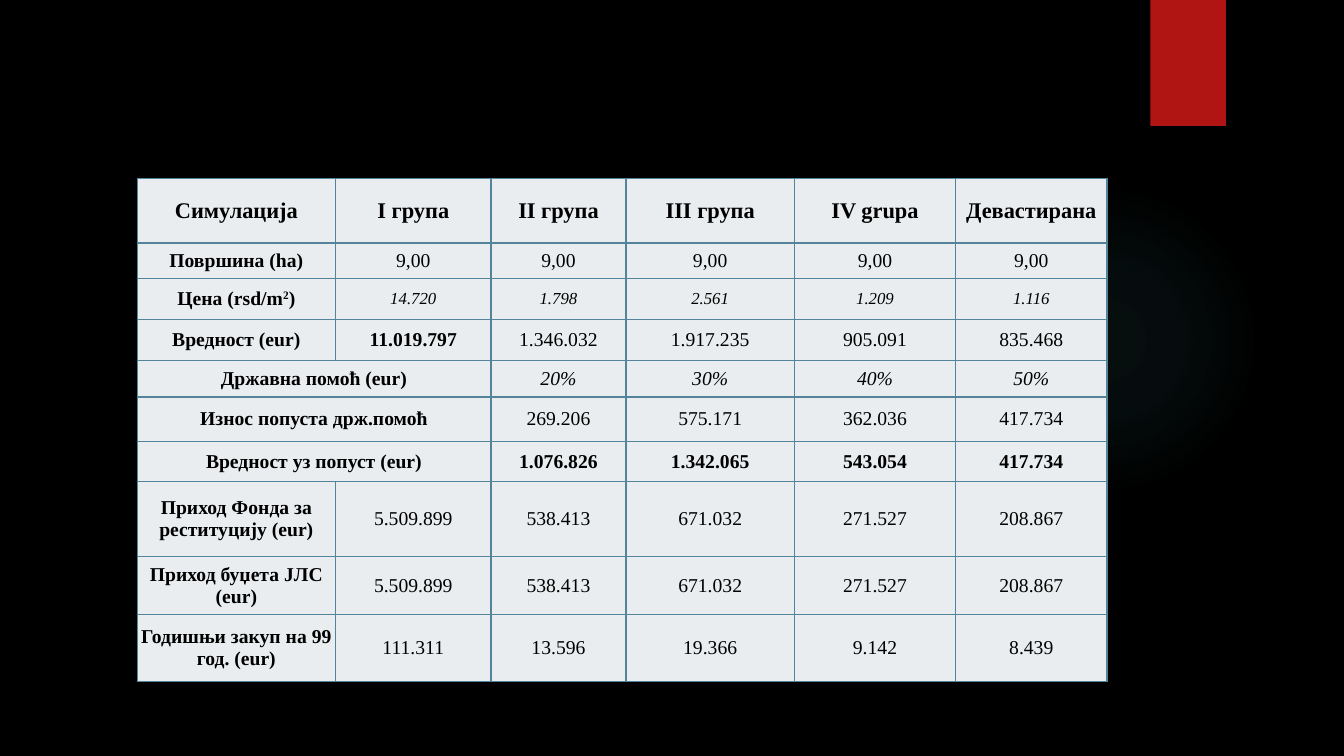
from dataclasses import dataclass

from lxml import etree
from pptx import Presentation
from pptx.dml.color import RGBColor
from pptx.enum import shapes, text
from pptx.oxml import ns
from pptx.util import Inches, Pt


@dataclass(frozen=True)
class Theme:
    background: str = "000000"
    ink: str = "000000"
    cell: str = "E9EDEF"
    border: str = "54849A"
    ribbon: str = "B01513"
    glow: str = "50B9C1"
    font: str = "Times New Roman"
    header_size: int = 16
    body_size: int = 14
    price_size: int = 12


THEME = Theme()

COLUMN_WIDTHS = [1.97, 1.54, 1.34, 1.67, 1.6, 1.5]
ROW_HEIGHTS = [0.64, 0.35, 0.41, 0.41, 0.36, 0.44, 0.4, 0.74, 0.58, 0.66]
HEADER_ROW, PRICE_ROW, VALUE_ROW, AID_ROW, DISCOUNTED_ROW = 0, 2, 3, 4, 6
INCOME = ["5.509.899", "538.413", "671.032", "271.527", "208.867"]
# None marks a cell that the label on its left spans.
ROWS = [
    ["Симулација", "I група", "II група", "III група", "IV grupa", "Девастирана"],
    ["Површина (ha)"] + ["9,00"] * 5,
    ["Цена (rsd/m^2^)", "14.720", "1.798", "2.561", "1.209", "1.116"],
    ["Вредност (eur)", "11.019.797", "1.346.032", "1.917.235", "905.091", "835.468"],
    ["Државна помоћ (eur)", None, "20%", "30%", "40%", "50%"],
    ["Износ попуста држ.помоћ", None, "269.206", "575.171", "362.036", "417.734"],
    ["Вредност уз попуст (eur)", None, "1.076.826", "1.342.065", "543.054", "417.734"],
    ["Приход Фонда за реституцију (eur)"] + INCOME,
    ["Приход буџета ЈЛС (eur)"] + INCOME,
    ["Годишњи закуп на 99 год. (eur)", "111.311", "13.596", "19.366", "9.142", "8.439"],
]


def add_element(parent, tag, **attributes):
    element = etree.SubElement(parent, ns.qn(tag))
    for name, value in attributes.items():
        element.set(name, str(value))
    return element


def add_color(parent, color, alpha=None):
    element = add_element(parent, "a:srgbClr", val=color)
    if alpha is not None:
        add_element(element, "a:alpha", val=alpha * 1000)


def add_plain_shape(slide, kind, left, top, width, height):
    shape = slide.shapes.add_shape(
        kind, Inches(left), Inches(top), Inches(width), Inches(height))
    shape.shadow.inherit = False
    shape.line.fill.background()
    return shape


def add_glow(slide):
    """Add the faint circle that fades out towards its edge."""
    glow = add_plain_shape(slide, shapes.MSO_SHAPE.OVAL, 9.41, 1.83, 3.08, 3.08)
    properties = glow._element.spPr
    gradient = etree.Element(ns.qn("a:gradFill"))
    stops = add_element(gradient, "a:gsLst")
    for position, alpha in [(0, 7), (36, 6), (69, 0)]:
        add_color(add_element(stops, "a:gs", pos=position * 1000), THEME.glow, alpha)
    circle = add_element(gradient, "a:path", path="circle")
    add_element(circle, "a:fillToRect", l=50000, t=50000, r=50000, b=50000)
    properties.find(ns.qn("a:prstGeom")).addnext(gradient)


def add_ribbon(slide):
    ribbon = add_plain_shape(slide, shapes.MSO_SHAPE.RECTANGLE, 11.41, 0, 0.75, 1.25)
    ribbon.fill.solid()
    ribbon.fill.fore_color.rgb = RGBColor.from_string(THEME.ribbon)
    effects = ribbon._element.spPr.find(ns.qn("a:effectLst"))
    shadow = add_element(effects, "a:outerShdw", blurRad=Pt(3), dist=Pt(2), dir=5400000)
    add_color(shadow, THEME.background, 45)


def style_cell(cell):
    """Set borders, fill, insets and anchor."""
    properties = cell._tc.get_or_add_tcPr()
    for side in ("a:lnL", "a:lnR", "a:lnT", "a:lnB"):
        line = add_element(properties, side, w=Pt(1))
        add_color(add_element(line, "a:solidFill"), THEME.border)
    cell.fill.solid()
    cell.fill.fore_color.rgb = RGBColor.from_string(THEME.cell)
    cell.margin_left = cell.margin_right = cell.margin_top = cell.margin_bottom = 0
    cell.vertical_anchor = text.MSO_ANCHOR.MIDDLE


def write_cell(cell, content, size, bold, italic):
    """Write centred text; a part between ^ marks is superscript."""
    paragraph = cell.text_frame.paragraphs[0]
    paragraph.alignment = text.PP_ALIGN.CENTER
    for index, part in enumerate(content.split("^")):
        run = paragraph.add_run()
        run.text = part
        if index % 2:
            run._r.get_or_add_rPr().set("baseline", "30000")
    font = paragraph.font
    font.name, font.size, font.bold, font.italic = THEME.font, Pt(size), bold, italic
    font.color.rgb = RGBColor.from_string(THEME.ink)


def text_style(row, column):
    """Return size, bold and italic for a cell."""
    if row == HEADER_ROW:
        return THEME.header_size, True, False
    if column == 0:
        return THEME.body_size, True, False
    size = THEME.price_size if row == PRICE_ROW else THEME.body_size
    bold = row == DISCOUNTED_ROW or (row, column) == (VALUE_ROW, 1)
    return size, bold, row in (PRICE_ROW, AID_ROW)


def add_simulation_table(slide):
    table = slide.shapes.add_table(
        len(ROWS), len(COLUMN_WIDTHS), Inches(1.36), Inches(1.77),
        Inches(sum(COLUMN_WIDTHS)), Inches(sum(ROW_HEIGHTS))).table
    table.first_row = table.horz_banding = False
    for column, width in zip(table.columns, COLUMN_WIDTHS):
        column.width = Inches(width)
    for row, height in zip(table.rows, ROW_HEIGHTS):
        row.height = Inches(height)
    for row, contents in enumerate(ROWS):
        for column, content in enumerate(contents):
            cell = table.cell(row, column)
            style_cell(cell)
            if content is None:
                table.cell(row, column - 1).merge(cell)
            else:
                write_cell(cell, content, *text_style(row, column))


def main():
    presentation = Presentation()
    presentation.slide_width, presentation.slide_height = Inches(13.33), Inches(7.5)
    slide = presentation.slides.add_slide(presentation.slide_layouts[6])
    slide.background.fill.solid()
    slide.background.fill.fore_color.rgb = RGBColor.from_string(THEME.background)
    add_glow(slide)
    add_ribbon(slide)
    add_simulation_table(slide)
    presentation.save("out.pptx")


if __name__ == "__main__":
    main()
